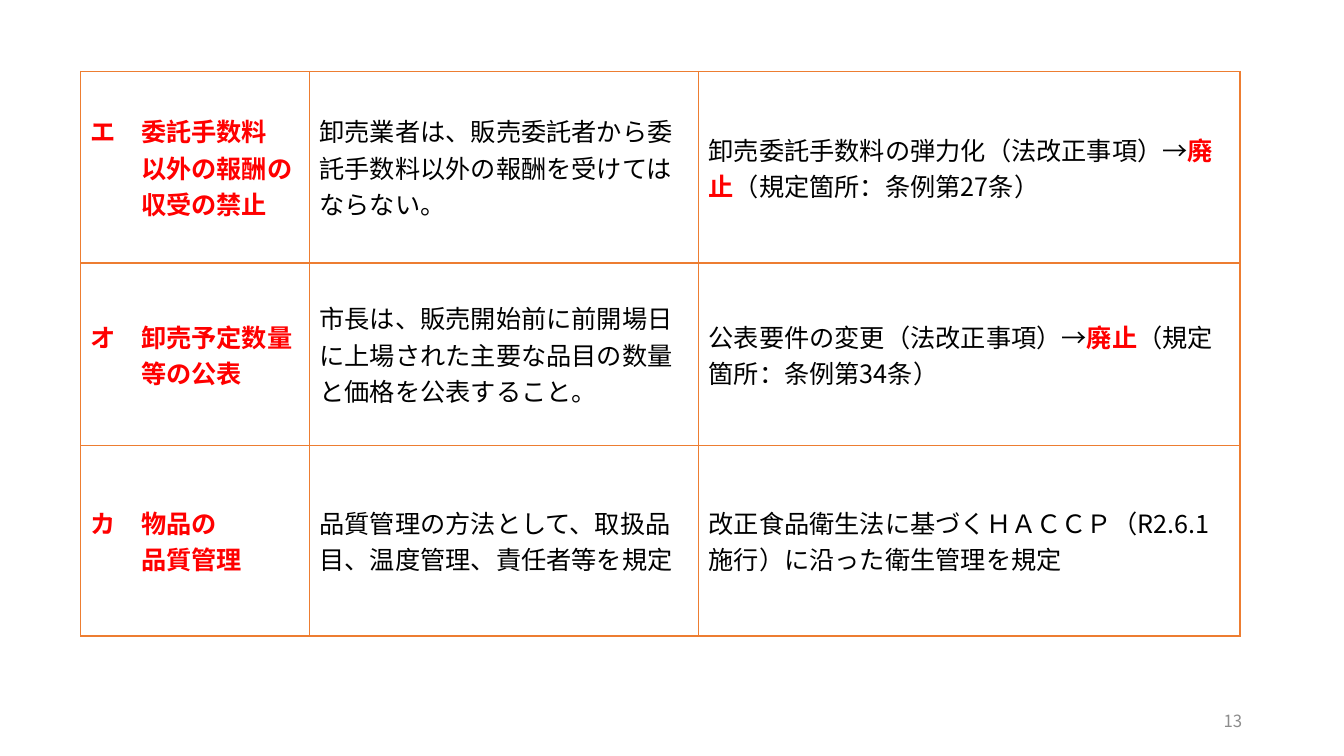
import pptx
import pptx.dml.color
import pptx.enum.text
import pptx.oxml.ns
import pptx.util
from lxml import etree
from pptx.util import Inches

RED = pptx.dml.color.RGBColor(0xFF, 0x00, 0x00)
BLACK = pptx.dml.color.RGBColor(0x00, 0x00, 0x00)
GRAY = pptx.dml.color.RGBColor(0x8C, 0x8C, 0x8C)
ORANGE = pptx.dml.color.RGBColor(0xED, 0x7D, 0x31)
FONT = "Noto Sans CJK JP"
MIDDLE = pptx.enum.text.MSO_ANCHOR.MIDDLE

COLUMN_WIDTHS = [2.27, 3.86, 5.37]
ROW_HEIGHTS = [1.9, 1.81, 1.89]
# Each row: heading lines, rule, and the change as (text, is_abolished) parts.
ROWS = [
    (["エ　委託手数料", "以外の報酬の", "収受の禁止"],
     "卸売業者は、販売委託者から委託手数料以外の報酬を受けてはならない。",
     [("卸売委託手数料の弾力化（法改正事項）→", False), ("廃止", True),
      ("（規定箇所：条例第27条）", False)]),
    (["オ　卸売予定数量", "等の公表"],
     "市長は、販売開始前に前開場日に上場された主要な品目の数量と価格を公表すること。",
     [("公表要件の変更（法改正事項）→", False), ("廃止", True),
      ("（規定箇所：条例第34条）", False)]),
    (["カ　物品の", "品質管理"],
     "品質管理の方法として、取扱品目、温度管理、責任者等を規定",
     [("改正食品衛生法に基づくＨＡＣＣＰ（R2.6.1施行）に沿った衛生管理を規定", False)]),
]


def add_run(p, text, size=18, color=BLACK, bold=False):
    r = p.add_run()
    r.text = text
    r.font.size = pptx.util.Pt(size)
    r.font.bold = bold
    r.font.color.rgb = color
    r.font.name = FONT
    ea = etree.SubElement(r.font._element, pptx.oxml.ns.qn("a:ea"))
    ea.set("typeface", FONT)


def set_borders(cell):
    tc_pr = cell._tc.get_or_add_tcPr()
    for i, side in enumerate(["lnL", "lnR", "lnT", "lnB"]):
        tc_pr.insert(i, pptx.oxml.parse_xml(
            f'<a:{side} {pptx.oxml.ns.nsdecls("a")} w="{pptx.util.Pt(1)}">'
            f'<a:solidFill><a:srgbClr val="{ORANGE}"/></a:solidFill></a:{side}>'))


def fill_heading(tf, lines):
    """Write the lines, indenting those after the first by two characters."""
    for i, line in enumerate(lines):
        p = tf.paragraphs[0] if i == 0 else tf.add_paragraph()
        if i > 0:
            p._p.get_or_add_pPr().set("marL", str(Inches(0.5)))
        add_run(p, line, color=RED, bold=True)


def add_rules_table(s):
    frame = s.shapes.add_table(len(ROWS), len(COLUMN_WIDTHS), Inches(0.8), Inches(0.71),
                               Inches(sum(COLUMN_WIDTHS)), Inches(sum(ROW_HEIGHTS)))
    table = frame.table
    table.first_row = table.horz_banding = False
    for column, width in zip(table.columns, COLUMN_WIDTHS):
        column.width = Inches(width)
    for row, height, (heading, rule, change) in zip(table.rows, ROW_HEIGHTS, ROWS):
        row.height = Inches(height)
        for cell in row.cells:
            cell.vertical_anchor = MIDDLE
            cell.fill.background()
            set_borders(cell)
        heading_cell, rule_cell, change_cell = row.cells
        fill_heading(heading_cell.text_frame, heading)
        add_run(rule_cell.text_frame.paragraphs[0], rule)
        for text, abolished in change:
            add_run(change_cell.text_frame.paragraphs[0], text,
                    color=RED if abolished else BLACK, bold=abolished)


def add_page_number(s, number):
    tf = s.shapes.add_textbox(Inches(9.42), Inches(6.95), Inches(3), Inches(0.4)).text_frame
    tf.word_wrap = True
    tf.vertical_anchor = MIDDLE
    p = tf.paragraphs[0]
    p.alignment = pptx.enum.text.PP_ALIGN.RIGHT
    add_run(p, number, size=12, color=GRAY)


def main():
    prs = pptx.Presentation()
    prs.slide_width, prs.slide_height = Inches(13.33), Inches(7.5)
    s = prs.slides.add_slide(prs.slide_layouts[6])
    add_page_number(s, "13")
    add_rules_table(s)
    prs.save("out.pptx")


if __name__ == "__main__":
    main()
